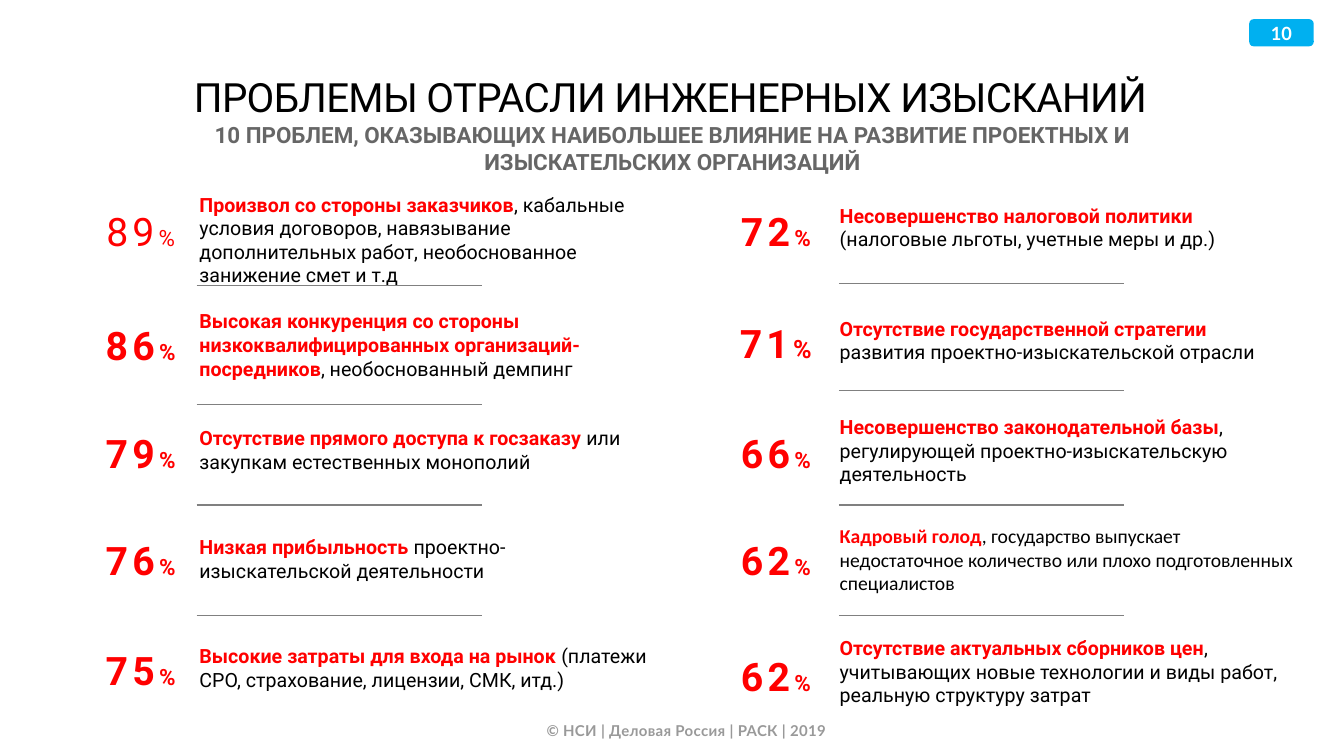
from dataclasses import dataclass

from lxml import etree
from pptx import Presentation
from pptx.dml.color import RGBColor
from pptx.enum.shapes import MSO_CONNECTOR, MSO_SHAPE
from pptx.enum.text import MSO_ANCHOR, PP_ALIGN
from pptx.oxml.ns import qn
from pptx.util import Pt

PX = 9144  # 100 px to the inch
LEFT, CENTER = PP_ALIGN.LEFT, PP_ALIGN.CENTER
TOP, MIDDLE = MSO_ANCHOR.TOP, MSO_ANCHOR.MIDDLE
STRAIGHT = MSO_CONNECTOR.STRAIGHT
ROUNDED = MSO_SHAPE.ROUNDED_RECTANGLE
RED, BLACK, WHITE, GREY = "FF0000", "000000", "FFFFFF", "808080"
NUMBER_WIDTH, NUMBER_HEIGHT, RULE_WIDTH = 139, 57, 283


@dataclass
class Span:
    text: str
    size: float
    color: str = BLACK
    bold: bool = False
    font: str = "Roboto"
    spacing: int = 0  # hundredths of a point


@dataclass
class Problem:
    percent: str
    number_top: int
    text_top: int
    text_height: int
    key: str
    rest: str
    font: str = "Roboto"
    number_bold: bool = True
    sign_size: int = 16


@dataclass
class Column:
    number_left: int
    text_left: int
    text_width: int
    rule_left: int
    rule_tops: list[int]
    problems: list[Problem]


COLUMNS = [
    Column(70, 188, 474, 195, [283, 401, 501, 611], [
        Problem("89", 201, 186, 81, "Произвол со стороны заказчиков",
                ", кабальные условия договоров, навязывание дополнительных работ, "
                "необоснованное занижение смет и т.д", number_bold=False),
        Problem("86", 314, 302, 81, "Высокая конкуренция со стороны "
                "низкоквалифицированных организаций-посредников",
                ", необоснованный демпинг"),
        Problem("79", 421, 418, 57, "Отсутствие прямого доступа к госзаказу ",
                "или закупкам естественных монополий"),
        Problem("76", 527, 526, 57, "Низкая прибыльность ",
                "проектно-изыскательской деятельности"),
        Problem("75", 636, 634, 57, "Высокие затраты для входа на рынок ",
                "(платежи СРО, страхование, лицензии, СМК, итд.)"),
    ]),
    Column(700, 823, 471, 832, [281, 387, 501, 611], [
        Problem("72", 201, 197, 57, "Несовершенство налоговой политики ",
                "(налоговые льготы, учетные меры и др.)"),
        Problem("71", 312, 309, 57, "Отсутствие государственной стратегии ",
                "развития проектно-изыскательской отрасли", sign_size=18),
        Problem("66", 421, 407, 81, "Несовершенство законодательной базы",
                ", регулирующей проектно-изыскательскую деятельность"),
        Problem("62", 527, 515, 81, "Кадровый голод",
                ", государство выпускает недостаточное количество или плохо "
                "подготовленных специалистов", font="Calibri"),
        Problem("62", 642, 626, 81, "Отсутствие актуальных сборников цен",
                ", учитывающих новые технологии и виды работ, реальную структуру затрат"),
    ]),
]


def rgb(color: str) -> RGBColor:
    return RGBColor.from_string(color)


def write(shape, spans: list[Span], align=LEFT, anchor=TOP) -> None:
    frame = shape.text_frame
    frame.word_wrap = True
    frame.vertical_anchor = anchor
    para = frame.paragraphs[0]
    para.alignment = align
    for span in spans:
        run = para.add_run()
        run.text = span.text
        formats = {"size": Pt(span.size), "bold": span.bold, "name": span.font}
        for name, value in formats.items():
            setattr(run.font, name, value)
        run.font.color.rgb = rgb(span.color)
        if span.spacing:
            run.font._element.set("spc", str(span.spacing))


def add_text(page, left: int, top: int, width: int, height: int,
             spans: list[Span], align=LEFT, anchor=TOP) -> None:
    box = page.shapes.add_textbox(left * PX, top * PX, width * PX, height * PX)
    write(box, spans, align, anchor)


def add_rule(page, left: int, top: int) -> None:
    rule = page.shapes.add_connector(
        STRAIGHT, left * PX, top * PX, (left + RULE_WIDTH) * PX, top * PX)
    rule.line.color.rgb = rgb(GREY)
    rule.line.width = Pt(0.75)
    etree.SubElement(rule._element.spPr, qn("a:effectLst"))


def add_page_number(page, number: str) -> None:
    badge = page.shapes.add_shape(ROUNDED, 1239 * PX, 19 * PX, 64 * PX, 27 * PX)
    badge.shadow.inherit = False
    badge.fill.solid()
    badge.fill.fore_color.rgb = rgb("00B0F0")
    badge.line.fill.background()
    for side in ("left", "top", "right", "bottom"):
        setattr(badge.text_frame, f"margin_{side}", 0)
    write(badge, [Span(number, 13, WHITE, True, "Lato")], CENTER, MIDDLE)


def add_column(page, column: Column) -> None:
    for problem in column.problems:
        add_text(page, column.text_left, problem.text_top,
                 column.text_width, problem.text_height,
                 [Span(problem.key, 14, RED, True, problem.font),
                  Span(problem.rest, 14, font=problem.font)])
        add_text(page, column.number_left, problem.number_top,
                 NUMBER_WIDTH, NUMBER_HEIGHT,
                 [Span(text, size, RED, problem.number_bold, spacing=300)
                  for text, size in ((problem.percent, 28), ("%", problem.sign_size))],
                 CENTER)
    for top in column.rule_tops:
        add_rule(page, column.rule_left, top)


def main() -> None:
    deck = Presentation()
    deck.slide_width, deck.slide_height = 1333 * PX, 750 * PX
    page = deck.slides.add_slide(deck.slide_layouts[6])

    # Footer and page number
    add_text(page, 443, 711, 476, 28,
             [Span("© НСИ | Деловая Россия | РАСК | 2019", 10.7, "999999",
                   True, "Lato", 25)], CENTER)
    add_page_number(page, "10")

    # Heading
    add_text(page, 129, 72, 1072, 47,
             [Span("ПРОБЛЕМЫ ОТРАСЛИ ИНЖЕНЕРНЫХ ИЗЫСКАНИЙ", 28.8, spacing=-50)],
             CENTER, MIDDLE)
    add_text(page, 131, 115, 1072, 37,
             [Span("10 ПРОБЛЕМ, ОКАЗЫВАЮЩИХ НАИБОЛЬШЕЕ ВЛИЯНИЕ НА РАЗВИТИЕ "
                   "ПРОЕКТНЫХ И ИЗЫСКАТЕЛЬСКИХ ОРГАНИЗАЦИЙ", 16, "666666", True)],
             CENTER)

    # Two columns of problems
    for column in COLUMNS:
        add_column(page, column)

    deck.save("out.pptx")


if __name__ == "__main__":
    main()
